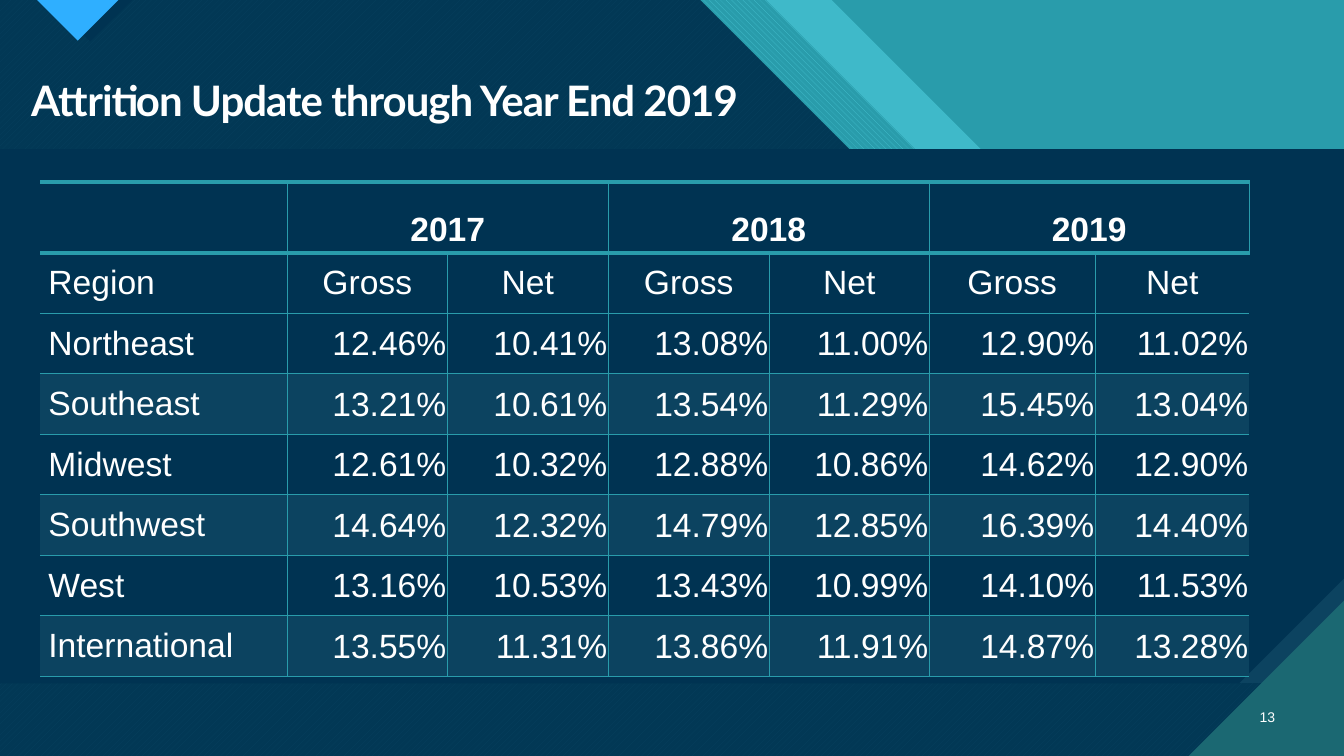
from dataclasses import dataclass

from lxml import etree
from pptx import Presentation
from pptx import util as u
from pptx.dml.color import RGBColor
from pptx.enum import dml, text
from pptx.oxml import ns

Pt = u.Pt
Points = list[tuple[float, float]]


@dataclass(frozen=True)
class Theme:
    navy: str = "003352"
    band: str = "0C4360"
    teal: str = "299CAB"
    aqua: str = "47C3D3"
    stripe: str = "3FB9C9"
    pine: str = "1B6872"
    blue: str = "2FAFFF"
    white: str = "FFFFFF"
    title_font: str = "Lato"
    body_font: str = "Arial"
    title_size: float = 30
    table_size: float = 24
    number_size: float = 10


@dataclass(frozen=True)
class Panel:
    points: Points
    color: str
    hatch: str = ""  # second colour of a diagonal pattern
    pattern: dml.MSO_PATTERN = dml.MSO_PATTERN.WIDE_UPWARD_DIAGONAL
    opacity: int = 100


@dataclass(frozen=True)
class Region:
    name: str
    rates: tuple[str, ...]


THEME = Theme()
WIDTH, HEIGHT = 960, 540
BAND_TOP, BAND_BOTTOM, SNIP = 106.6, 488.2, 75
SLANT = 214  # depth of the 45 degree edges at the top

HEADER = [(0, 0), (500, 0), (500 + SLANT, SLANT), (805, SLANT),
          (WIDTH, 369), (WIDTH, HEIGHT), (0, HEIGHT)]
PANELS = [
    Panel([(547, 0), (594, 0), (594 + SLANT, SLANT), (547 + SLANT, SLANT)], THEME.stripe),
    Panel([(500, 0), (547, 0), (547 + SLANT, SLANT), (500 + SLANT, SLANT)],
          THEME.aqua, THEME.teal, dml.MSO_PATTERN.WIDE_DOWNWARD_DIAGONAL),
    Panel(HEADER, THEME.aqua, THEME.pine),
    Panel(HEADER, THEME.navy, opacity=90),
    Panel([(34.5, 0), (94.5, 0), (64.5, 29.5)], THEME.navy),
    Panel([(26.5, 0), (84.5, 0), (55.5, 29)], THEME.blue),
    Panel([(0, BAND_TOP), (WIDTH, BAND_TOP), (WIDTH, BAND_BOTTOM), (0, BAND_BOTTOM)],
          THEME.band),
    Panel([(0, BAND_TOP), (WIDTH, BAND_TOP), (WIDTH, BAND_BOTTOM - SNIP),
           (WIDTH - SNIP, BAND_BOTTOM), (0, BAND_BOTTOM)], THEME.navy),
    Panel([(849, HEIGHT), (WIDTH, HEIGHT), (WIDTH, 429)], THEME.pine),
]

YEARS = ("2017", "2018", "2019")
REGIONS = [
    Region("Northeast", ("12.46%", "10.41%", "13.08%", "11.00%", "12.90%", "11.02%")),
    Region("Southeast", ("13.21%", "10.61%", "13.54%", "11.29%", "15.45%", "13.04%")),
    Region("Midwest", ("12.61%", "10.32%", "12.88%", "10.86%", "14.62%", "12.90%")),
    Region("Southwest", ("14.64%", "12.32%", "14.79%", "12.85%", "16.39%", "14.40%")),
    Region("West", ("13.16%", "10.53%", "13.43%", "10.99%", "14.10%", "11.53%")),
    Region("International", ("13.55%", "11.31%", "13.86%", "11.91%", "14.87%", "13.28%")),
]
COLUMN_WIDTHS = (176.4, 114.3, 115, 115, 114.3, 118.6, 110)
YEAR_ROW, ROW = 50.4, 43.2


def rgb(color: str) -> RGBColor:
    return RGBColor.from_string(color)


def draw_panel(page, panel: Panel) -> None:
    builder = page.shapes.build_freeform(*map(Pt, panel.points[0]), scale=1.0)
    builder.add_line_segments([(Pt(x), Pt(y)) for x, y in panel.points[1:]])
    shape = builder.convert_to_shape()
    shape.shadow.inherit = False
    shape.line.fill.background()
    fill = shape.fill
    if panel.hatch:
        fill.patterned()
        fill.pattern = panel.pattern
        fill.fore_color.rgb, fill.back_color.rgb = rgb(panel.color), rgb(panel.hatch)
        return
    fill.solid()
    fill.fore_color.rgb = rgb(panel.color)
    if panel.opacity < 100:
        color = shape.element.spPr.find(ns.qn("a:solidFill"))[0]
        etree.SubElement(color, ns.qn("a:alpha"), val=str(panel.opacity * 1000))


def format_text(para, font: str, size: float, align, bold: bool = False) -> None:
    para.alignment = align
    for span in para.runs:
        span.font.name, span.font.size, span.font.bold = font, Pt(size), bold
        span.font.color.rgb = rgb(THEME.white)


def set_border(cell, side: str, width: float) -> None:
    """Rule one side (L, R, T or B, in that order); zero width leaves it bare."""
    line = etree.SubElement(cell._tc.get_or_add_tcPr(), ns.qn(f"a:ln{side}"),
                            w=str(int(Pt(width))))
    if width:
        fill = etree.SubElement(line, ns.qn("a:solidFill"))
        etree.SubElement(fill, ns.qn("a:srgbClr"), val=THEME.teal)
    else:
        etree.SubElement(line, ns.qn("a:noFill"))


def format_cell(cell, row: int, column: int) -> None:
    is_year, is_rate = row == 0, row > 1 and column > 0
    last = len(COLUMN_WIDTHS) - 1
    set_border(cell, "L", 1 if column else 0)
    set_border(cell, "R", 1 if column < last or is_year else 0)
    set_border(cell, "T", 3 if row < 2 else 1)
    set_border(cell, "B", 3 if is_year else 1)
    if row > 1 and row % 2:
        cell.fill.solid()
        cell.fill.fore_color.rgb = rgb(THEME.band)
    else:
        cell.fill.background()
    cell.margin_left = cell.margin_right = Pt(0.7 if is_rate else 5.8)
    cell.margin_top = Pt(0.7 if is_rate else 2.9)
    cell.margin_bottom = Pt(0 if is_rate else 2.9)
    cell.vertical_anchor = text.MSO_ANCHOR.BOTTOM if is_year else text.MSO_ANCHOR.MIDDLE
    align = text.PP_ALIGN.RIGHT if is_rate else text.PP_ALIGN.CENTER
    format_text(cell.text_frame.paragraphs[0], THEME.body_font, THEME.table_size,
                align if column else text.PP_ALIGN.LEFT, is_year)


def draw_table(page) -> None:
    rows = [[""] + [label for year in YEARS for label in (year, "")],
            ["Region"] + ["Gross", "Net"] * len(YEARS)]
    rows += [[region.name, *region.rates] for region in REGIONS]
    height = YEAR_ROW + ROW * (len(rows) - 1)
    table = page.shapes.add_table(len(rows), len(COLUMN_WIDTHS), Pt(28.8), Pt(130.2),
                                  Pt(sum(COLUMN_WIDTHS)), Pt(height)).table
    table.first_row = table.horz_banding = False
    for column, width in zip(table.columns, COLUMN_WIDTHS):
        column.width = Pt(width)
    for r, labels in enumerate(rows):
        table.rows[r].height = Pt(ROW if r else YEAR_ROW)
        for c, label in enumerate(labels):
            cell = table.cell(r, c)
            cell.text_frame.text = label
            format_cell(cell, r, c)
    for c in range(1, len(COLUMN_WIDTHS), 2):
        table.cell(0, c).merge(table.cell(0, c + 1))


def place_title(page) -> None:
    title = page.shapes.title
    title.element.getparent().append(title.element)  # in front of the panels
    title.left, title.top, title.width, title.height = map(Pt, (15.1, 53.3, 882.7, 40.3))
    frame = title.text_frame
    frame.text = "Attrition Update through Year End 2019"
    frame.word_wrap = True
    frame.vertical_anchor = text.MSO_ANCHOR.MIDDLE
    para = frame.paragraphs[0]
    para.line_spacing = 0.9
    format_text(para, THEME.title_font, THEME.title_size, text.PP_ALIGN.LEFT, True)
    para.runs[0].font._element.set("spc", "-70")


def draw_page_number(page) -> None:
    box = page.shapes.add_textbox(*map(Pt, (886.3, 497.5, 31.7, 28.8)))
    frame = box.text_frame
    frame.text = "13"
    frame.word_wrap = True
    frame.vertical_anchor = text.MSO_ANCHOR.MIDDLE
    format_text(frame.paragraphs[0], THEME.body_font, THEME.number_size, text.PP_ALIGN.RIGHT)


def main() -> None:
    deck = Presentation()
    deck.slide_width, deck.slide_height = Pt(WIDTH), Pt(HEIGHT)
    page = deck.slides.add_slide(deck.slide_layouts.get_by_name("Title Only"))
    page.background.fill.solid()
    page.background.fill.fore_color.rgb = rgb(THEME.teal)
    for panel in PANELS:
        draw_panel(page, panel)
    place_title(page)
    draw_table(page)
    draw_page_number(page)
    deck.save("out.pptx")


if __name__ == "__main__":
    main()
